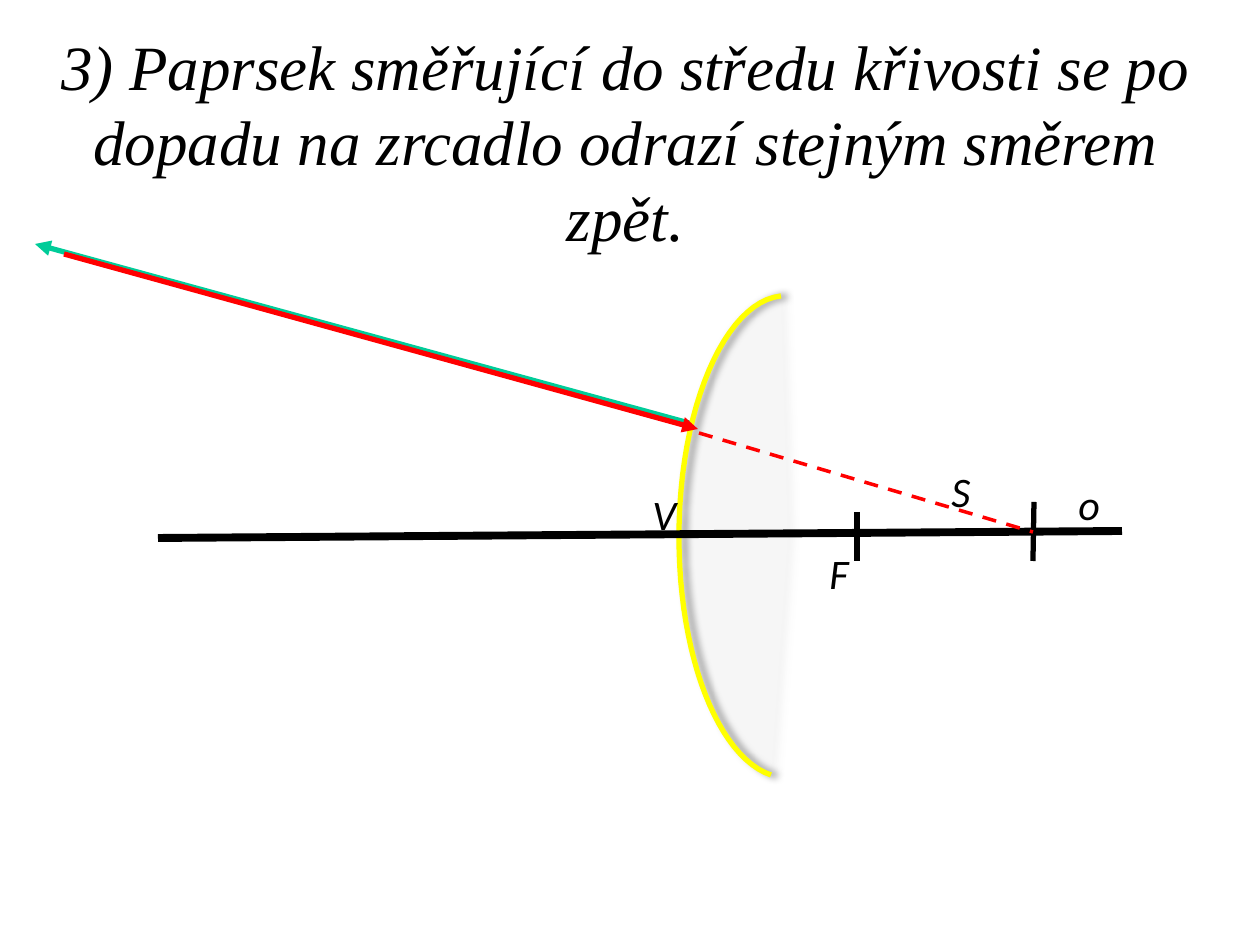
from dataclasses import dataclass
from pptx import Presentation
from pptx.dml.color import RGBColor as Rgb
from pptx.enum.dml import MSO_LINE as Dash
from pptx.enum.shapes import MSO_CONNECTOR as Conn
from pptx.enum.text import MSO_ANCHOR as Anchor, PP_ALIGN as Align
from pptx.oxml import parse_xml
from pptx.oxml.ns import nsdecls, qn
from pptx.util import Pt
from lxml.etree import SubElement

PX = 914400 / 126


@dataclass(frozen=True)
class Theme:
    black: str = "000000"
    red: str = "FF0000"
    green: str = "00CC99"
    yellow: str = "FFFF00"
    white: str = "FFFFFF"
    serif: str = "Times New Roman"
    sans: str = "Calibri"
    title: int = 36
    label: int = 24
    axis: float = 4.5
    thick: int = 3
    thin: int = 2


T = Theme()
TITLE = ("3) Paprsek směřující do středu křivosti se po dopadu "
         "na zrcadlo odrazí stejným směrem zpět.")
TITLE_BOX = (20, 21, 1211, 239)

# text, left, top, width, height
LABELS = [
    ("o", 1066, 472, 49, 63),
    ("F", 817, 541, 29, 63),
    ("S", 939, 459, 49, 63),
    ("V", 640, 482, 49, 63),
]

# start, end, colour, width, dashed, arrow
LINES = [
    ((158, 538), (1122, 531), T.black, T.axis, False, False),
    ((857, 512), (857, 561), T.black, T.thick, False, False),
    ((1034, 502), (1033, 561), T.black, T.thick, False, False),
    ((689, 423), (35, 244), T.green, T.thick, False, True),
    ((64, 254), (698, 429), T.red, T.thick, False, True),
    ((699, 433), (1033, 532), T.red, T.thin, True, False),
]

# cubic curves of the mirror, from its lower end to its upper end
CURVES = [
    ((771, 775), (718, 757), (679, 656), (679, 537)),
    ((679, 537), (679, 408), (725, 302), (781, 296)),
]
BACK = (788, 537)
STEPS = 24


def emu(*vals):
    return [round(v * PX) for v in vals]


def cubic(pts, t):
    """Point of a cubic curve at t between 0 and 1."""
    u = 1 - t
    mix = (u ** 3, 3 * u * u * t, 3 * u * t * t, t ** 3)
    return tuple(sum(m * p[i] for m, p in zip(mix, pts)) for i in (0, 1))


def add_text(slide, text, box, font, size):
    shape = slide.shapes.add_textbox(*emu(*box))
    frame = shape.text_frame
    frame.word_wrap = True
    para = frame.paragraphs[0]
    para.text = text
    para.font.name = font
    para.font.size = Pt(size)
    para.font.italic = True
    para.font.color.rgb = Rgb.from_string(T.black)
    return frame, para


def add_title(slide):
    frame, para = add_text(slide, TITLE, TITLE_BOX, T.serif, T.title)
    frame.vertical_anchor = Anchor.MIDDLE
    para.alignment = Align.CENTER


def add_line(slide, start, end, color, width, dashed, arrow):
    wire = slide.shapes.add_connector(Conn.STRAIGHT, *emu(*start, *end))
    wire.line.color.rgb = Rgb.from_string(color)
    wire.line.width = Pt(width)
    if dashed:
        wire.line.dash_style = Dash.DASH
    if arrow:
        SubElement(wire.line._get_or_add_ln(), qn("a:tailEnd"), type="triangle")
    SubElement(wire._element.spPr, qn("a:effectLst"))


def add_outline(slide, pts, close):
    """Freeform with a soft shadow to the right."""
    first, *rest = [emu(*p) for p in pts]
    pen = slide.shapes.build_freeform(*first)
    pen.add_line_segments(rest, close=close)
    shape = pen.convert_to_shape()
    shape._element.spPr.append(parse_xml(
        f'<a:effectLst {nsdecls("a")}>'
        f'<a:outerShdw blurRad="{Pt(4)}" dist="{Pt(3)}" dir="0" rotWithShape="0">'
        f'<a:srgbClr val="{T.black}"><a:alpha val="40000"/></a:srgbClr>'
        '</a:outerShdw></a:effectLst>'))
    return shape


def add_mirror(slide):
    arc = [CURVES[0][0]] + [cubic(c, k / STEPS)
                            for c in CURVES for k in range(1, STEPS + 1)]
    body = add_outline(slide, arc + [BACK], True)
    body.line.fill.background()
    body.fill.solid()
    body.fill.fore_color.rgb = Rgb.from_string(T.white)
    tint = body._element.spPr.find(qn("a:solidFill"))[0]
    SubElement(tint, qn("a:alpha"), val="10000")
    rim = add_outline(slide, arc, False)
    rim.fill.background()
    rim.line.color.rgb = Rgb.from_string(T.yellow)
    rim.line.width = Pt(T.thick)


def main():
    deck = Presentation()
    deck.slide_width, deck.slide_height = emu(1260, 945)
    slide = deck.slides.add_slide(deck.slide_layouts[6])
    add_title(slide)
    add_mirror(slide)
    for line in LINES:
        add_line(slide, *line)
    for text, *box in LABELS:
        add_text(slide, text, box, T.sans, T.label)
    deck.save("out.pptx")


if __name__ == "__main__":
    main()
